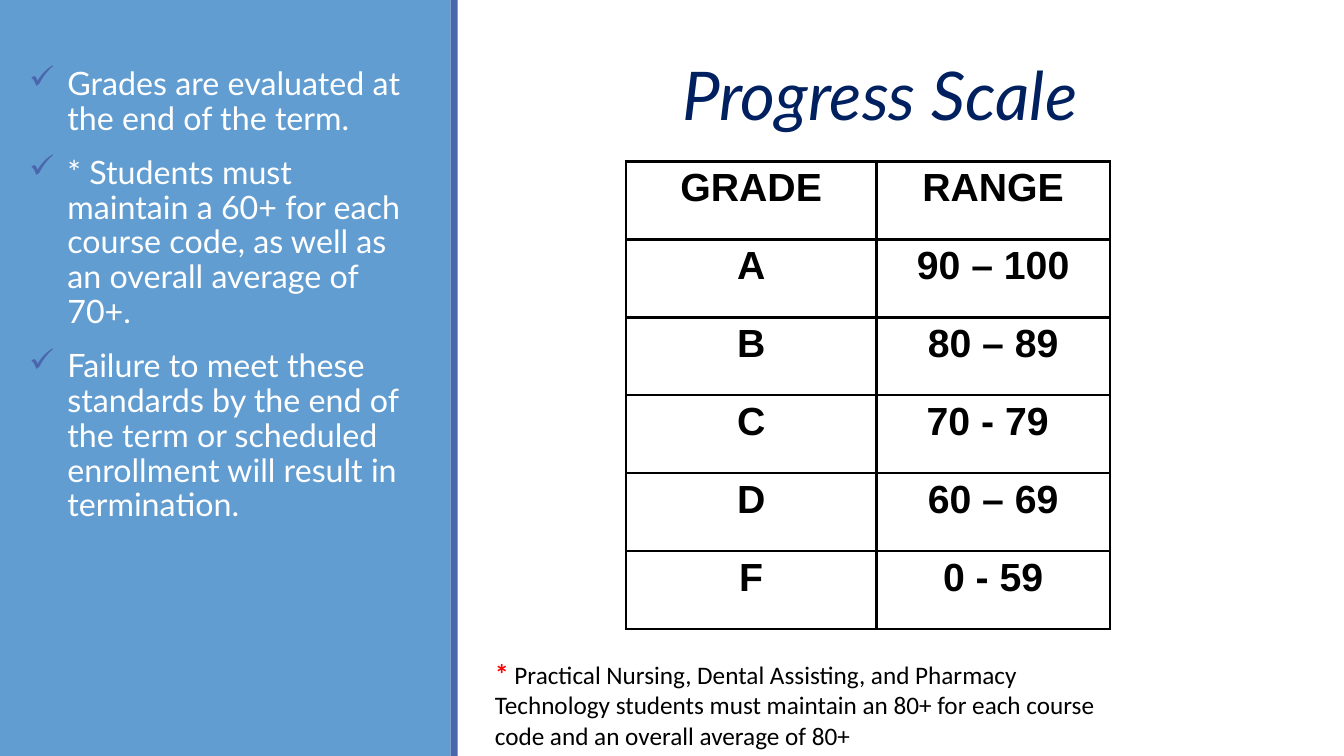
from lxml.etree import SubElement
from pptx import Presentation
from pptx.dml.color import RGBColor
from pptx.enum.shapes import MSO_SHAPE
from pptx.enum.text import MSO_ANCHOR, PP_ALIGN
from pptx.oxml.ns import qn
from pptx.util import Inches, Pt

TITLE = "Progress Scale"
RULES = [
    "Grades are evaluated at the end of the term.",
    "* Students must maintain a 60+ for each course code, "
    "as well as an overall average of 70+.",
    "Failure to meet these standards by the end of the term "
    "or scheduled enrollment will result in termination.",
]
GRADES = [
    ("GRADE", "RANGE"),
    ("A", "90 – 100"),
    ("B", "80 – 89"),
    ("C", "70 - 79 "),
    ("D", "60 – 69"),
    ("F", "0 - 59"),
]
NOTE_MARK = "*"
NOTE = (" Practical Nursing, Dental Assisting, and Pharmacy Technology students must "
        "maintain an 80+ for each course code and an overall average of 80+")

PANELS = [((0, 0, 4.47, 7.5), "629DD1"), ((4.47, 0, 0.07, 7.5), "4A66AC")]
COLUMN_WIDTHS = (2.48, 2.32)
TABLE_HEIGHT = 4.64
INDENT = 0.38

RULE_FONT = {"name": "Lato", "size": Pt(23), "color": "FFFFFF"}
TITLE_FONT = {"name": "Lato", "size": Pt(48), "color": "002060", "italic": True, "bold": False}
CELL_FONT = {"name": "Arial", "size": Pt(28), "color": "000000", "bold": True}
MARK_FONT = {"name": "Calibri", "size": Pt(20), "color": "FF0000", "bold": True}
NOTE_FONT = {"name": "Calibri", "size": Pt(18), "color": "000000", "bold": False}


def rgb(value):
    return RGBColor.from_string(value)


def add_span(para, text, style):
    span = para.add_run()
    span.text = text
    for name, value in style.items():
        if name == "color":
            span.font.color.rgb = rgb(value)
        else:
            setattr(span.font, name, value)


def add_text_box(page, *place):
    frame = page.shapes.add_textbox(*map(Inches, place)).text_frame
    frame.word_wrap = True
    return frame


def add_check_bullet(para):
    props = para._p.get_or_add_pPr()
    props.set("marL", str(Inches(INDENT)))
    props.set("indent", str(-Inches(INDENT)))
    color = SubElement(props, qn("a:buClr"))
    SubElement(color, qn("a:srgbClr"), val="4A66AC")
    SubElement(props, qn("a:buChar"), char="✓")


def add_borders(cell):
    props = cell._tc.get_or_add_tcPr()
    for position, side in enumerate(("lnL", "lnR", "lnT", "lnB")):
        line = SubElement(props, qn(f"a:{side}"), w=str(Pt(2.25)))
        fill = SubElement(line, qn("a:solidFill"))
        SubElement(fill, qn("a:srgbClr"), val="000000")
        props.remove(line)
        props.insert(position, line)


def add_panels(page):
    for place, color in PANELS:
        panel = page.shapes.add_shape(MSO_SHAPE.RECTANGLE, *map(Inches, place))
        panel.shadow.inherit = False
        panel.fill.solid()
        panel.fill.fore_color.rgb = rgb(color)
        panel.line.fill.background()


def add_rules(page):
    frame = add_text_box(page, 0.19, 0.62, 3.93, 6.88)
    for index, rule in enumerate(RULES):
        para = frame.add_paragraph() if index else frame.paragraphs[0]
        add_check_bullet(para)
        para.line_spacing = 0.9
        para.space_before = Pt(12 if index else 0)
        para.space_after = Pt(2)
        add_span(para, rule, RULE_FONT)


def add_grades(page):
    place = map(Inches, (6.21, 1.6, sum(COLUMN_WIDTHS), TABLE_HEIGHT))
    table = page.shapes.add_table(len(GRADES), len(COLUMN_WIDTHS), *place).table
    for column, width in zip(table.columns, COLUMN_WIDTHS):
        column.width = Inches(width)
    for row, texts in zip(table.rows, GRADES):
        row.height = Inches(TABLE_HEIGHT / len(GRADES))
        for cell, text in zip(row.cells, texts):
            cell.fill.background()
            add_borders(cell)
            para = cell.text_frame.paragraphs[0]
            para.alignment = PP_ALIGN.CENTER
            add_span(para, text, CELL_FONT)


def set_title(page):
    title = page.shapes.title
    place = {"left": 4.66, "top": 0.47, "width": 8.13, "height": 0.91}
    for name, value in place.items():
        setattr(title, name, Inches(value))
    title.text_frame.vertical_anchor = MSO_ANCHOR.MIDDLE
    para = title.text_frame.paragraphs[0]
    para.alignment = PP_ALIGN.CENTER
    add_span(para, TITLE, TITLE_FONT)


def add_note(page):
    para = add_text_box(page, 4.81, 6.46, 6.2, 1.04).paragraphs[0]
    add_span(para, NOTE_MARK, MARK_FONT)
    add_span(para, NOTE, NOTE_FONT)


def main():
    deck = Presentation()
    deck.slide_width, deck.slide_height = Inches(13.33), Inches(7.5)
    page = deck.slides.add_slide(deck.slide_layouts[5])
    for build in (add_panels, add_rules, add_grades, set_title, add_note):
        build(page)
    deck.save("out.pptx")


if __name__ == "__main__":
    main()
